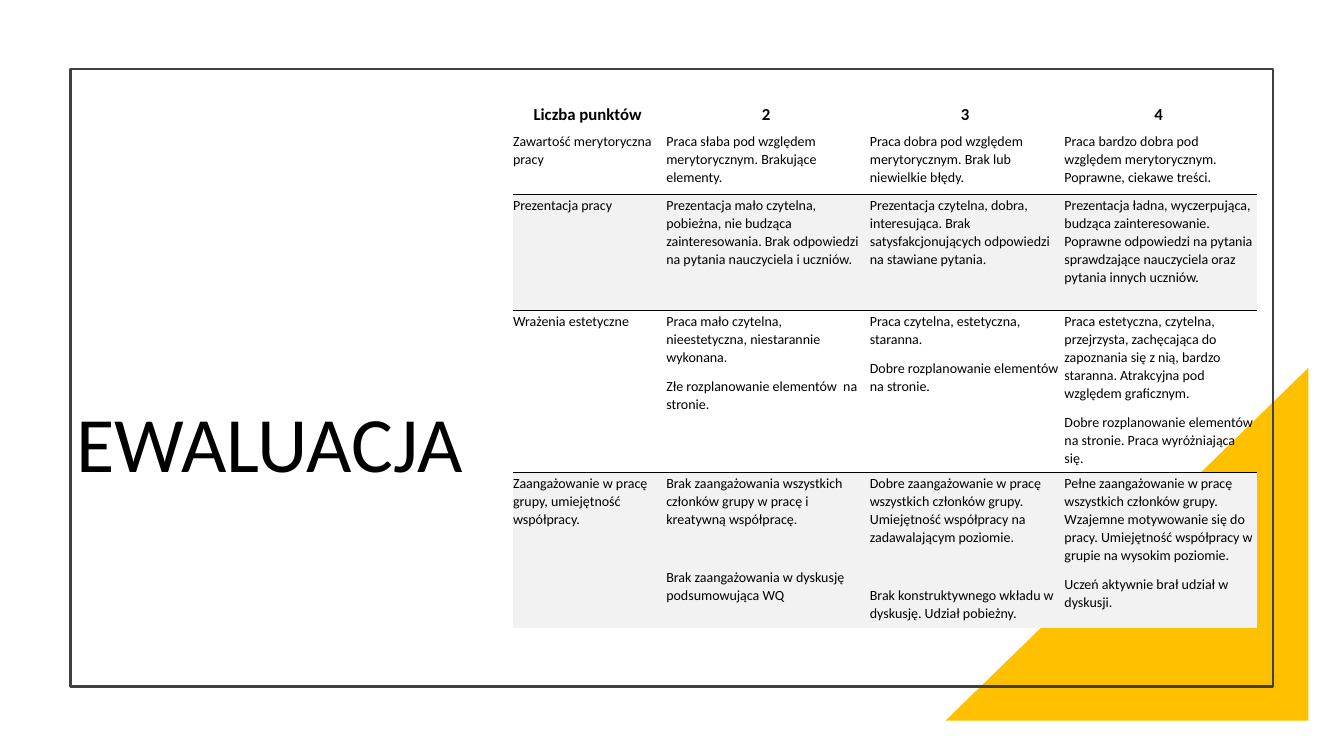
import pptx
import pptx.dml.color
import pptx.enum.shapes
import pptx.enum.text
import pptx.oxml
import pptx.oxml.ns
import pptx.util

Pt = pptx.util.Pt
RGBColor = pptx.dml.color.RGBColor
PP_ALIGN = pptx.enum.text.PP_ALIGN
MSO_ANCHOR = pptx.enum.text.MSO_ANCHOR
MSO_SHAPE = pptx.enum.shapes.MSO_SHAPE

BLACK = RGBColor(0x00, 0x00, 0x00)
FRAME_GRAY = RGBColor(0x40, 0x40, 0x40)
BAND_GRAY = RGBColor(0xF2, 0xF2, 0xF2)
GOLD = RGBColor(0xFF, 0xC0, 0x00)

FONT = "Calibri"
NO_STYLE = "{2D5ABB26-0587-4C30-8999-92F81FD0307C}"
COLUMN_WIDTHS = [109.5, 145.4, 139, 137.5]
ROW_HEIGHTS = [24.5, 46.1, 82.8, 113.8, 110.2]
BANDED_ROWS = (2, 4)
RULED_ROWS = (1, 3)  # rows with a line below them
SPLIT_CELLS = ((4, 1), (4, 2))  # cells with a wide gap between paragraphs
SPLIT_GAP = 20.8

CRITERIA = [
    ["Liczba punktów", "2", "3", "4"],
    [
        "Zawartość merytoryczna pracy",
        "Praca słaba pod względem merytorycznym. Brakujące elementy.",
        "Praca dobra pod względem merytorycznym. Brak lub niewielkie błędy.",
        "Praca bardzo dobra pod względem merytorycznym. Poprawne, ciekawe treści.",
    ],
    [
        "Prezentacja pracy",
        "Prezentacja mało czytelna, pobieżna, nie budząca zainteresowania. "
        "Brak odpowiedzi na pytania nauczyciela i uczniów.",
        "Prezentacja czytelna, dobra, interesująca. "
        "Brak satysfakcjonujących odpowiedzi na stawiane pytania.",
        "Prezentacja ładna, wyczerpująca, budząca zainteresowanie. Poprawne odpowiedzi "
        "na pytania sprawdzające nauczyciela oraz pytania innych uczniów.",
    ],
    [
        "Wrażenia estetyczne",
        "Praca mało czytelna, nieestetyczna, niestarannie wykonana.\n"
        "Złe rozplanowanie elementów  na stronie.",
        "Praca czytelna, estetyczna, staranna.\n"
        "Dobre rozplanowanie elementów na stronie.",
        "Praca estetyczna, czytelna, przejrzysta, zachęcająca do zapoznania się z nią, "
        "bardzo staranna. Atrakcyjna pod względem graficznym.\n"
        "Dobre rozplanowanie elementów na stronie. Praca wyróżniająca się.",
    ],
    [
        "Zaangażowanie w pracę grupy, umiejętność współpracy.",
        "Brak zaangażowania wszystkich członków grupy w pracę i kreatywną współpracę.\n"
        "Brak zaangażowania w dyskusję podsumowująca WQ",
        "Dobre zaangażowanie w pracę wszystkich członków grupy. "
        "Umiejętność współpracy na zadawalającym poziomie.\n"
        "Brak konstruktywnego wkładu w dyskusję. Udział pobieżny.",
        "Pełne zaangażowanie w pracę wszystkich członków grupy. Wzajemne motywowanie się "
        "do pracy. Umiejętność współpracy w grupie na wysokim poziomie.\n"
        "Uczeń aktywnie brał udział w dyskusji.",
    ],
]


def write_text(frame, text, size=10, bold=False, align=PP_ALIGN.LEFT,
               line_spacing=1.06, space_after=8, gap=0):
    """Write one paragraph per line of text, with extra gap between them."""
    for index, line in enumerate(text.split("\n")):
        para = frame.add_paragraph() if index else frame.paragraphs[0]
        para.alignment = align
        para.line_spacing = line_spacing
        para.space_before = Pt(gap if index else 0)
        para.space_after = Pt(space_after)
        span = para.add_run()
        span.text = line
        span.font.name = FONT
        span.font.size = Pt(size)
        span.font.bold = bold
        span.font.color.rgb = BLACK


def add_border(cell, side):
    """Draw a thin line on the cell side named by its tag, lnT or lnB."""
    line = pptx.oxml.parse_xml(
        f'<a:{side} {pptx.oxml.ns.nsdecls("a")} w="{Pt(0.75)}"><a:solidFill>'
        f'<a:srgbClr val="{BLACK}"/></a:solidFill></a:{side}>')
    cell._tc.get_or_add_tcPr().insert(0, line)


deck = pptx.Presentation()
deck.slide_width = Pt(960)
deck.slide_height = Pt(540)
page = deck.slides.add_slide(deck.slide_layouts[5])

# Corner triangle and outline
triangle = page.shapes.add_shape(
    MSO_SHAPE.RIGHT_TRIANGLE, Pt(675.4), Pt(262.8), Pt(259.2), Pt(252))
triangle._element.spPr.xfrm.set("flipH", "1")
triangle.fill.solid()
triangle.fill.fore_color.rgb = GOLD
triangle.line.fill.background()
triangle.shadow.inherit = False

outline = page.shapes.add_shape(
    MSO_SHAPE.RECTANGLE, Pt(50.4), Pt(49), Pt(859), Pt(441.4))
outline.fill.background()
outline.line.color.rgb = FRAME_GRAY
outline.line.width = Pt(1.5)
outline.shadow.inherit = False

# Title
title = page.shapes.title
title.left, title.top, title.width, title.height = Pt(47.5), Pt(77), Pt(290.2), Pt(276.5)
title.text_frame.vertical_anchor = MSO_ANCHOR.BOTTOM
title.text_frame.auto_size = pptx.enum.text.MSO_AUTO_SIZE.NONE
write_text(title.text_frame, "EWALUACJA", size=56, align=PP_ALIGN.RIGHT,
           line_spacing=0.9, space_after=0)

# Table of criteria
table = page.shapes.add_table(
    len(ROW_HEIGHTS), len(COLUMN_WIDTHS), Pt(366.5), Pt(68.4),
    Pt(sum(COLUMN_WIDTHS)), Pt(sum(ROW_HEIGHTS))).table
table.first_row = False
table.horz_banding = False
table._tbl.tblPr.find(pptx.oxml.ns.qn("a:tableStyleId")).text = NO_STYLE
for column, width in zip(table.columns, COLUMN_WIDTHS):
    column.width = Pt(width)
for row, height in zip(table.rows, ROW_HEIGHTS):
    row.height = Pt(height)

for row_index, texts in enumerate(CRITERIA):
    header = row_index == 0
    for column_index, text in enumerate(texts):
        cell = table.cell(row_index, column_index)
        cell.margin_left = Pt(0)
        cell.margin_top = Pt(0.7 if header else 1.4)
        cell.margin_right = Pt(2.9)
        cell.margin_bottom = Pt(3.6)
        cell.vertical_anchor = MSO_ANCHOR.BOTTOM if header else MSO_ANCHOR.TOP
        if row_index in BANDED_ROWS:
            cell.fill.solid()
            cell.fill.fore_color.rgb = BAND_GRAY
            add_border(cell, "lnT")
        else:
            cell.fill.background()
        if row_index in RULED_ROWS:
            add_border(cell, "lnB")
        write_text(cell.text_frame, text, size=12 if header else 10, bold=header,
                   align=PP_ALIGN.CENTER if header else PP_ALIGN.LEFT,
                   gap=SPLIT_GAP if (row_index, column_index) in SPLIT_CELLS else 0)

deck.save("out.pptx")
